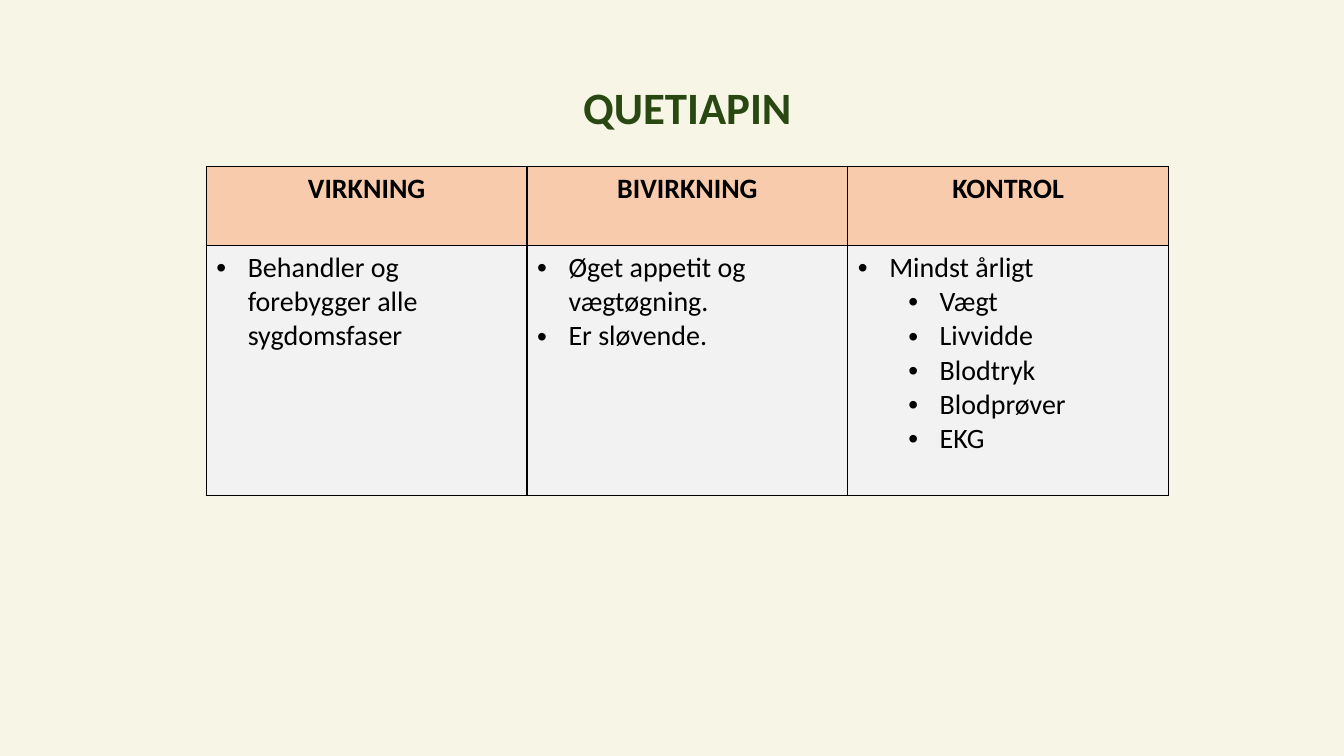
"""Build the slide on quetiapin: effect, side effects and monitoring."""
from lxml.etree import SubElement
from pptx import Presentation
from pptx.dml.color import RGBColor
from pptx.enum.text import MSO_ANCHOR, PP_ALIGN
from pptx.oxml.ns import qn
from pptx.util import Cm, Pt


def color(hex_string):
    return RGBColor.from_string(hex_string)


def add_text(paragraph, text, size, bold, hex_string):
    run = paragraph.add_run()
    run.text = text
    run.font.name = "Calibri"
    run.font.size = Pt(size)
    run.font.bold = bold
    run.font.color.rgb = color(hex_string)


presentation = Presentation()
presentation.slide_width = Cm(33.87)
presentation.slide_height = Cm(19.05)
slide = presentation.slides.add_slide(presentation.slide_layouts[5])
slide.background.fill.solid()
slide.background.fill.fore_color.rgb = color("F7F6E6")

title = slide.shapes.title
title.left, title.top, title.width, title.height = Cm(2.72), Cm(1.7), Cm(29.21), Cm(2.13)
title.text_frame.vertical_anchor = MSO_ANCHOR.MIDDLE
title_paragraph = title.text_frame.paragraphs[0]
title_paragraph.alignment = PP_ALIGN.CENTER
title_paragraph.line_spacing = 0.9
add_text(title_paragraph, "QUETIAPIN", 32, True, "294711")

columns = [
    ("VIRKNING", [(0, "Behandler og forebygger alle sygdomsfaser")]),
    ("BIVIRKNING", [(0, "Øget appetit og vægtøgning."), (0, "Er sløvende.")]),
    ("KONTROL", [(0, "Mindst årligt"), (1, "Vægt"), (1, "Livvidde"),
                 (1, "Blodtryk"), (1, "Blodprøver"), (1, "EKG")]),
]
table = slide.shapes.add_table(2, 3, Cm(5.2), Cm(4.19), Cm(24.25), Cm(8.3)).table
table.rows[0].height = Cm(2)
table.rows[1].height = Cm(6.3)

for cell in table.iter_cells():
    properties = cell._tc.get_or_add_tcPr()
    for side in ("a:lnL", "a:lnR", "a:lnT", "a:lnB"):
        border = SubElement(properties, qn(side), w=str(Pt(1)))
        border_fill = SubElement(border, qn("a:solidFill"))
        SubElement(border_fill, qn("a:srgbClr"), val="000000")

for index, (heading, items) in enumerate(columns):
    header, body = table.cell(0, index), table.cell(1, index)
    for cell, fill in ((header, "F8CBAD"), (body, "F2F2F2")):
        cell.fill.solid()
        cell.fill.fore_color.rgb = color(fill)

    paragraph = header.text_frame.paragraphs[0]
    paragraph.alignment = PP_ALIGN.CENTER
    add_text(paragraph, heading, 20, True, "000000")

    for number, (level, text) in enumerate(items):
        text_frame = body.text_frame
        paragraph = text_frame.add_paragraph() if number else text_frame.paragraphs[0]
        paragraph.level = level
        properties = paragraph._p.get_or_add_pPr()
        properties.set("marL", str(Cm(0.79 + 1.27 * level)))
        properties.set("indent", str(-Cm(0.79)))
        SubElement(properties, qn("a:buFont"), typeface="Arial")
        SubElement(properties, qn("a:buChar"), char="•")
        add_text(paragraph, text, 20, False, "000000")

presentation.save("out.pptx")
